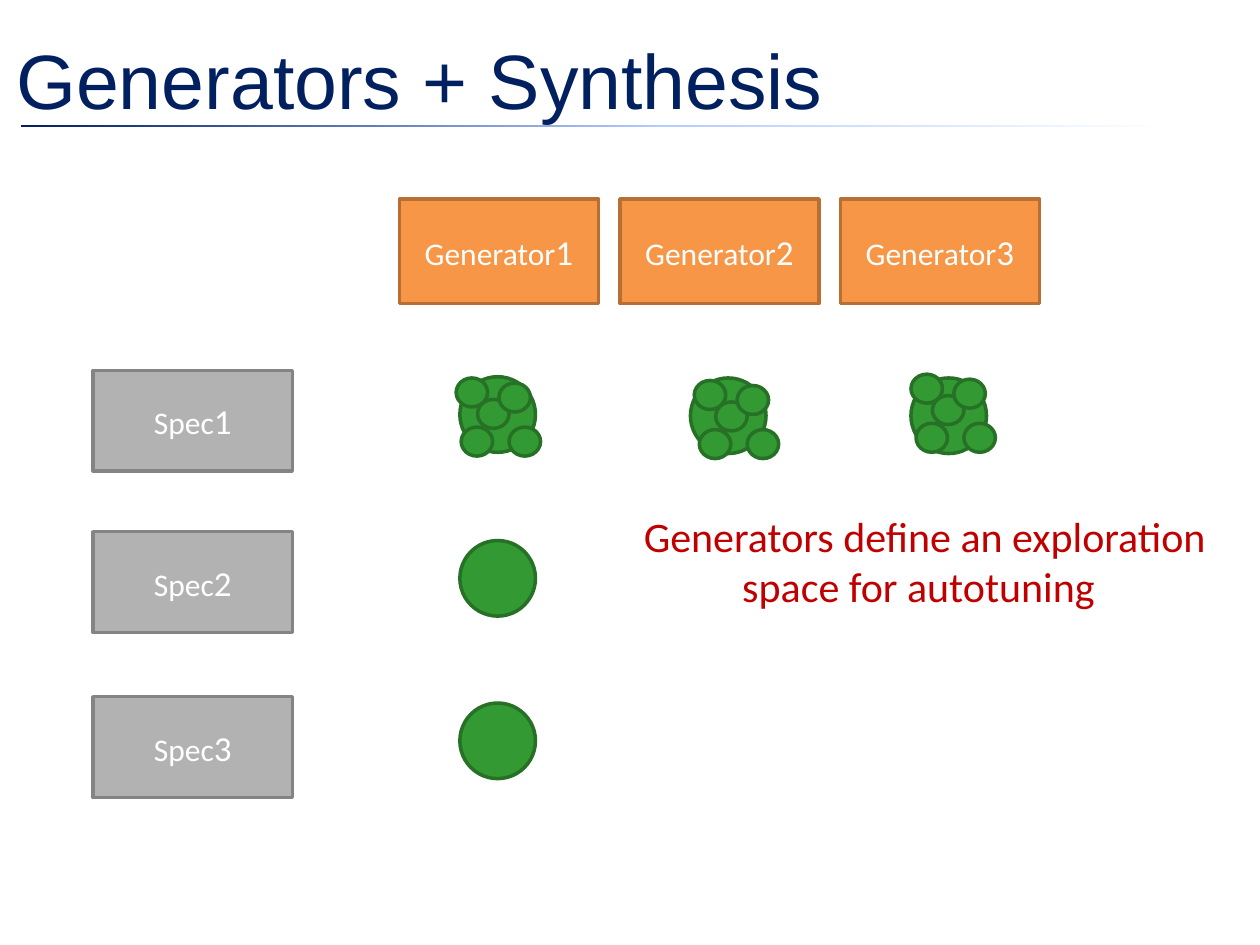
import pptx
import pptx.util
import pptx.dml.color
import pptx.enum.shapes
import pptx.enum.text
import pptx.oxml
import pptx.oxml.ns
from pptx.util import Inches

RGBColor = pptx.dml.color.RGBColor
SHAPE = pptx.enum.shapes.MSO_SHAPE
ANCHOR = pptx.enum.text.MSO_ANCHOR
ALIGN = pptx.enum.text.PP_ALIGN

NAVY = RGBColor(0x00, 0x20, 0x60)
PALE_BLUE = RGBColor(0xB4, 0xCD, 0xFF)
WHITE = RGBColor(0xFF, 0xFF, 0xFF)
ORANGE = RGBColor(0xF7, 0x96, 0x46)
DARK_ORANGE = RGBColor(0xB7, 0x6F, 0x34)
GRAY = RGBColor(0xB2, 0xB2, 0xB2)
DARK_GRAY = RGBColor(0x84, 0x84, 0x84)
GREEN = RGBColor(0x33, 0x99, 0x33)
DARK_GREEN = RGBColor(0x26, 0x71, 0x26)
RED = RGBColor(0xC0, 0x00, 0x00)

GENERATOR_LEFTS = [3.17, 4.92, 6.67]
SPEC_TOPS = [2.94, 4.22, 5.53]
DESIGN_POINTS = [(3.65, 2.99), (3.65, 4.29), (3.65, 5.58), (5.48, 3), (7.23, 3)]
CLUSTER_CORNERS = [(3.62, 3), (7.23, 2.97), (5.51, 3.02)]
VARIANT_OFFSETS = [(0, 0), (0.17, 0.17), (0.34, 0.04), (0.04, 0.39), (0.42, 0.39)]


def style_run(run, size, color, font="Calibri"):
    run.font.size = pptx.util.Pt(size)
    run.font.name = font
    run.font.color.rgb = color


def add_outlined(shapes, preset, left, top, width, height, fill, outline):
    shape = shapes.add_shape(preset, Inches(left), Inches(top), Inches(width), Inches(height))
    shape.shadow.inherit = False
    shape.fill.solid()
    shape.fill.fore_color.rgb = fill
    shape.line.color.rgb = outline
    shape.line.width = pptx.util.Pt(2)
    return shape


def add_numbered_box(shapes, label, number, left, top, height, fill, outline):
    box = add_outlined(shapes, SHAPE.RECTANGLE, left, top, 1.58, height, fill, outline)
    box.text_frame.vertical_anchor = ANCHOR.MIDDLE
    paragraph = box.text_frame.paragraphs[0]
    paragraph.alignment = ALIGN.CENTER
    for text, size in ((label, 18), (str(number), 20)):
        run = paragraph.add_run()
        run.text = text
        style_run(run, size, WHITE)


def add_circle(shapes, left, top, width, height):
    add_outlined(shapes, SHAPE.OVAL, left, top, width, height, GREEN, DARK_GREEN)


def add_variant_cluster(slide, left, top):
    cluster = slide.shapes.add_group_shape()
    for dx, dy in VARIANT_OFFSETS:
        add_circle(cluster.shapes, left + dx, top + dy, 0.25, 0.23)


def add_title_rule(slide):
    rule = slide.shapes.add_shape(
        SHAPE.RECTANGLE, Inches(0.17), Inches(0.99), Inches(9.83), Inches(0.02))
    rule.shadow.inherit = False
    rule.line.fill.background()
    stops = "".join(
        f'<a:gs pos="{position * 1000}"><a:srgbClr val="{color}"/></a:gs>'
        for position, color in ((7, WHITE), (48, PALE_BLUE), (100, NAVY)))
    gradient = pptx.oxml.parse_xml(
        f'<a:gradFill {pptx.oxml.ns.nsdecls("a")}><a:gsLst>{stops}</a:gsLst>'
        '<a:lin ang="10800000" scaled="0"/></a:gradFill>')
    rule.element.spPr.find(pptx.oxml.ns.qn("a:prstGeom")).addnext(gradient)


def set_title(slide, text):
    title = slide.shapes.title
    title.left, title.top = Inches(0.03), Inches(0)
    title.width, title.height = Inches(9.97), Inches(1.25)
    title.text_frame.text = text
    title.text_frame.vertical_anchor = ANCHOR.MIDDLE
    paragraph = title.text_frame.paragraphs[0]
    paragraph.alignment = ALIGN.LEFT
    style_run(paragraph.runs[0], 44, NAVY, "Arial")


def add_takeaway(slide, text):
    takeaway = slide.shapes.add_textbox(Inches(4.75), Inches(4), Inches(5.08), Inches(2.6))
    takeaway.text_frame.word_wrap = True
    takeaway.text_frame.text = text
    paragraph = takeaway.text_frame.paragraphs[0]
    paragraph.alignment = ALIGN.CENTER
    paragraph.space_before = pptx.util.Pt(4.8)
    style_run(paragraph.runs[0], 24, RED)
    properties = paragraph._p.get_or_add_pPr()
    namespace = pptx.oxml.ns.nsdecls("a")
    for bullet in (f'<a:buClr {namespace}><a:srgbClr val="{WHITE}"/></a:buClr>',
                   f'<a:buSzPct {namespace} val="83000"/>',
                   f'<a:buChar {namespace} char="•"/>'):
        properties.append(pptx.oxml.parse_xml(bullet))


def main():
    """Build the generators and synthesis slide."""
    deck = pptx.Presentation()
    deck.slide_width, deck.slide_height = Inches(10), Inches(7.5)
    slide = deck.slides.add_slide(deck.slide_layouts[5])
    add_title_rule(slide)
    set_title(slide, "Generators + Synthesis")
    for number, left in enumerate(GENERATOR_LEFTS, 1):
        add_numbered_box(slide.shapes, "Generator", number, left, 1.58, 0.83, ORANGE, DARK_ORANGE)
    for number, top in enumerate(SPEC_TOPS, 1):
        add_numbered_box(slide.shapes, "Spec", number, 0.74, top, 0.8, GRAY, DARK_GRAY)
    for left, top in DESIGN_POINTS:
        add_circle(slide.shapes, left, top, 0.6, 0.6)
    for left, top in CLUSTER_CORNERS:
        add_variant_cluster(slide, left, top)
    add_takeaway(slide, "Generators define an exploration space for autotuning")
    deck.save("out.pptx")


if __name__ == "__main__":
    main()
